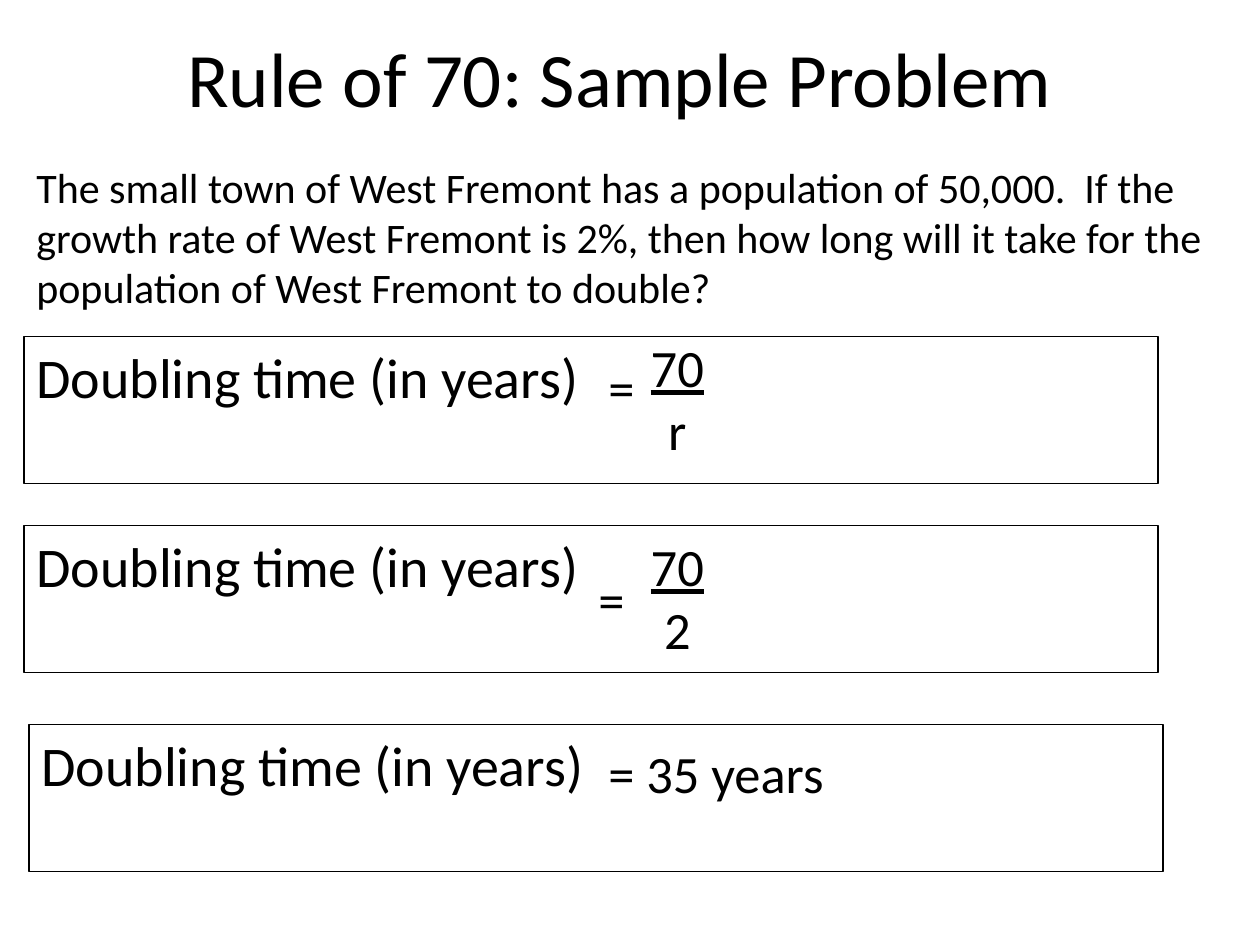
from pptx import Presentation
from pptx.dml.color import RGBColor as RGB
from pptx.enum.shapes import MSO_SHAPE as Shape
from pptx.enum.text import MSO_ANCHOR as Anchor, PP_ALIGN as Align
from pptx.util import Inches, Pt

COLORS = {"ink": "000000", "page": "FFFFFF"}
FONT = "Calibri"
TERM = "Doubling time (in years)"
PROBLEM = (
    "The small town of West Fremont has a population of 50,000.  If the "
    "growth rate of West Fremont is 2%, then how long will it take for the "
    "population of West Fremont to double?"
)


class Deck:
    def __init__(self):
        self.prs = Presentation()
        self.prs.slide_width = Inches(10)
        self.prs.slide_height = Inches(7.5)
        self.slide = self.prs.slides.add_slide(self.prs.slide_layouts[5])
        fill = self.slide.background.fill
        fill.solid()
        fill.fore_color.rgb = self.color("page")

    def color(self, name):
        return RGB.from_string(COLORS[name])

    def label(self, shape, text, size, align=Align.LEFT, anchor=Anchor.TOP):
        frame = shape.text_frame
        frame.text = text
        frame.word_wrap = True
        frame.vertical_anchor = anchor
        for para in frame.paragraphs:
            para.alignment = align
            for run in para.runs:
                run.font.name = FONT
                run.font.size = Pt(size)
                run.font.color.rgb = self.color("ink")
        return frame

    def title(self, text, x, y, w, h):
        shape = self.slide.shapes.title
        shape.left, shape.top = Inches(x), Inches(y)
        shape.width, shape.height = Inches(w), Inches(h)
        self.label(shape, text, 44, Align.CENTER, Anchor.MIDDLE)

    def text(self, text, x, y, w, h, size=30, align=Align.LEFT, group=None):
        shapes = (group or self.slide).shapes
        box = shapes.add_textbox(Inches(x), Inches(y), Inches(w), Inches(h))
        return self.label(box, text, size, align)

    def panel(self, text, x, y):
        box = self.slide.shapes.add_shape(
            Shape.RECTANGLE, Inches(x), Inches(y), Inches(9), Inches(1.17))
        box.shadow.inherit = False
        box.fill.background()
        box.line.color.rgb = self.color("ink")
        box.line.width = Pt(0.75)
        frame = self.label(box, text, 32)
        frame.paragraphs[0].space_before = Pt(2)

    def ratio(self, top, base, y, sign_x, sign_y):
        """Group an equals sign with an underlined top over a base."""
        group = self.slide.shapes.add_group_shape()
        frame = self.text(f"{top}\n{base}", 4.69, y, 1.17, 1.11,
                          align=Align.CENTER, group=group)
        frame.margin_left = Inches(0.3)
        frame.paragraphs[0].runs[0].font.underline = True
        self.text("=", sign_x, sign_y, 0.42, 0.61, group=group)


def main():
    deck = Deck()
    deck.title("Rule of 70: Sample Problem", 0.42, 0.17, 9, 0.87)
    deck.text(PROBLEM, 0.19, 1.23, 9.5, 1.31, size=24)
    for x, y in ((0.19, 2.67), (0.19, 4.17), (0.23, 5.75)):
        deck.panel(TERM, x, y)
    deck.ratio("70", "r", 2.61, 4.73, 2.77)
    deck.ratio("70", "2", 4.19, 4.65, 4.45)
    deck.text("= 35 years", 4.73, 5.83, 2.52, 0.61)
    deck.prs.save("out.pptx")


if __name__ == "__main__":
    main()
